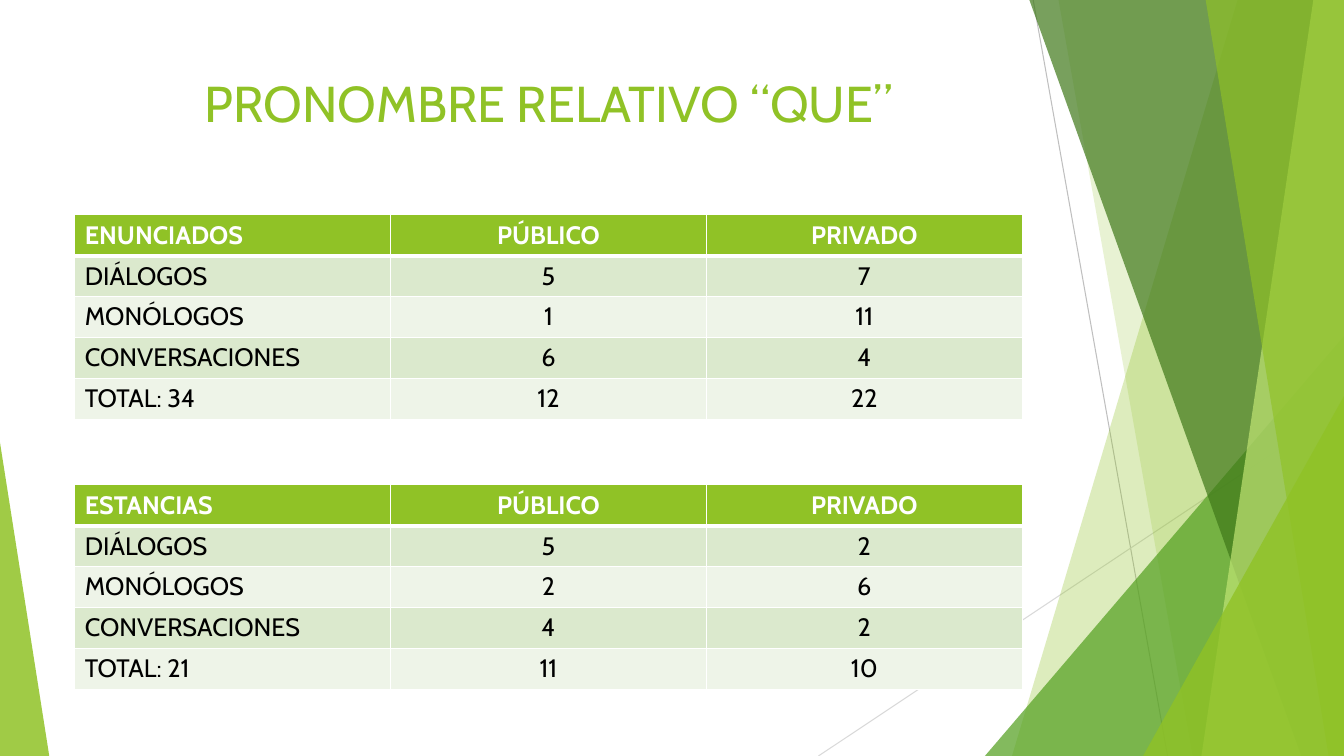
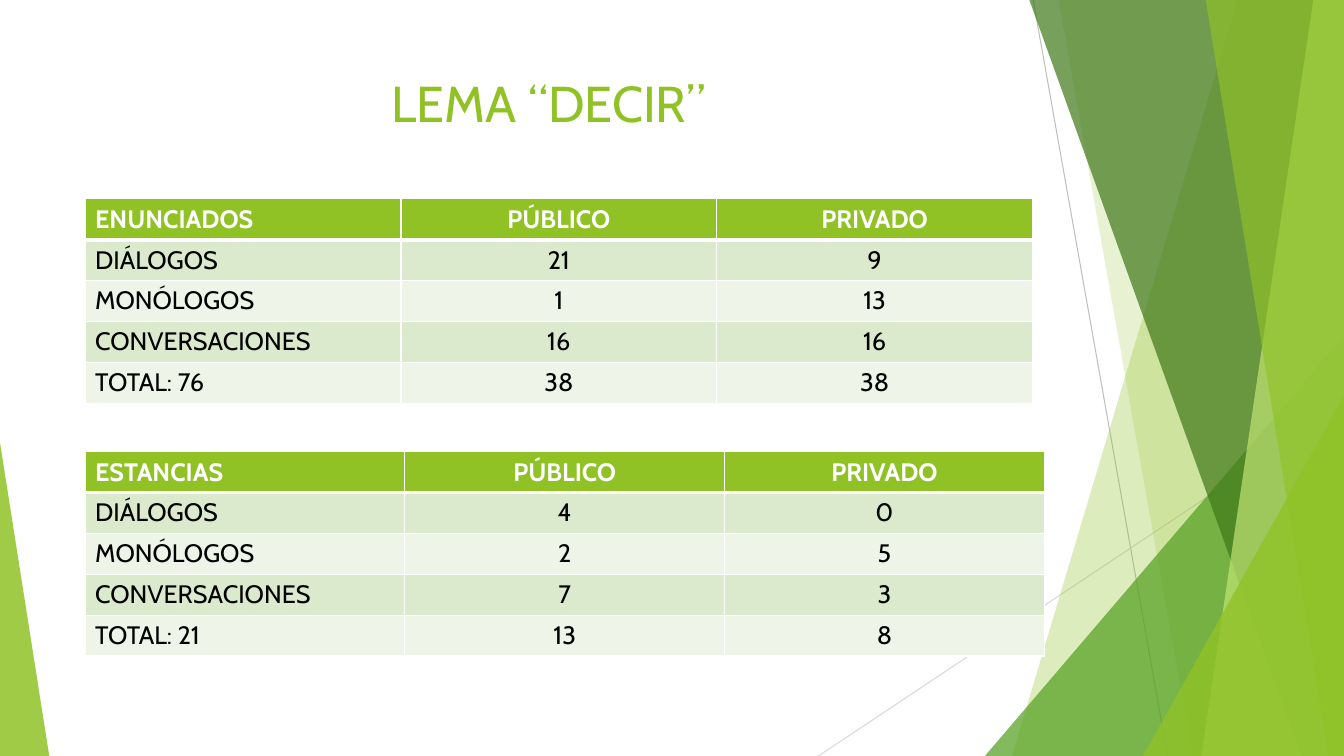
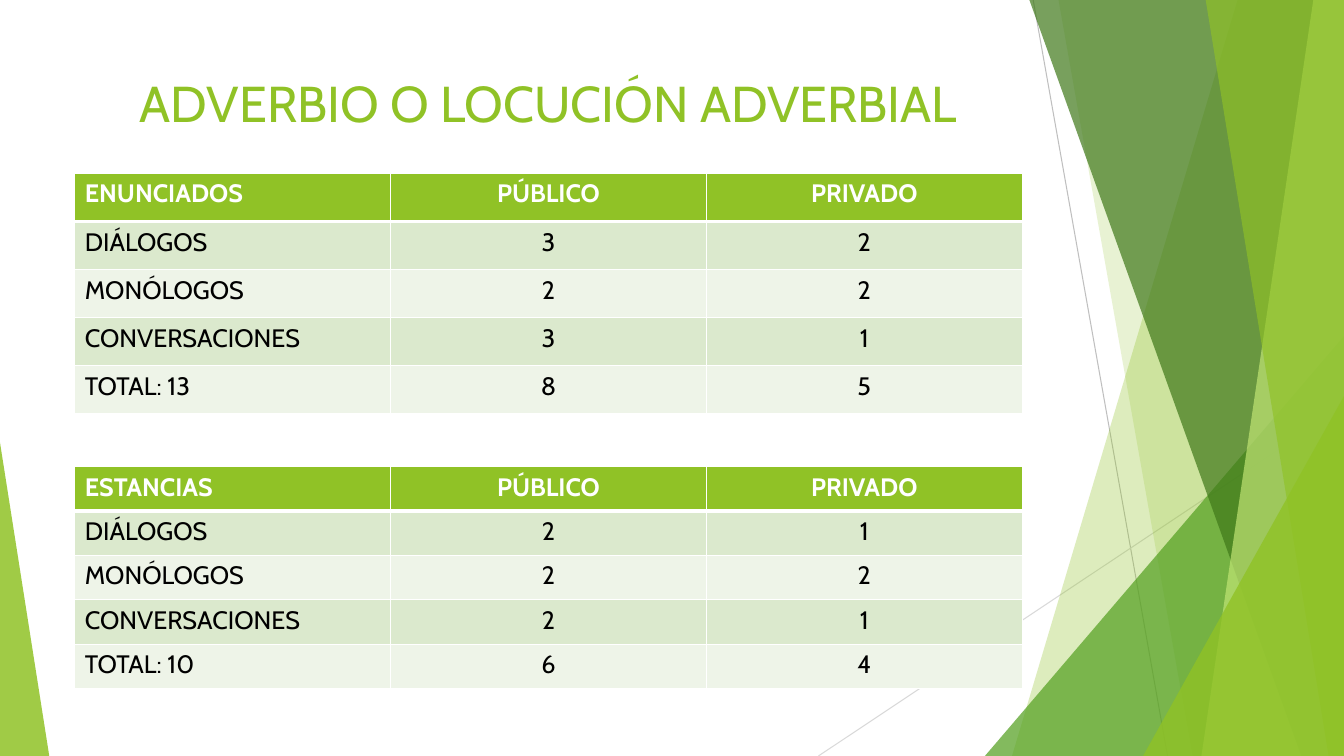
from dataclasses import dataclass
from typing import NamedTuple

from pptx import Presentation
from pptx.dml.color import RGBColor
from pptx.enum.shapes import MSO_CONNECTOR, MSO_SHAPE
from pptx.enum.text import MSO_ANCHOR, PP_ALIGN
from pptx.oxml.ns import qn
from pptx.oxml.xmlchemy import OxmlElement
from pptx.shapes.autoshape import Shape
from pptx.slide import Slide
from pptx.table import _Cell as Cell
from pptx.util import Pt

WIDTH, HEIGHT = 960, 540
FONT = "Cabin"
TITLE_SIZE, CELL_SIZE = 36, 18

GREEN = RGBColor(0x90, 0xC2, 0x26)
MID_GREEN = RGBColor(0x54, 0xA0, 0x21)
DARK_GREEN = RGBColor(0x3F, 0x78, 0x19)
LIME = RGBColor(0xC0, 0xE4, 0x74)
BAND_DARK = RGBColor(0xDB, 0xE9, 0xCD)
BAND_LIGHT = RGBColor(0xEE, 0xF4, 0xE8)
GREY = RGBColor(0xBF, 0xBF, 0xBF)
LIGHT_GREY = RGBColor(0xD9, 0xD9, 0xD9)
WHITE = RGBColor(0xFF, 0xFF, 0xFF)
BLACK = RGBColor(0, 0, 0)

COLUMNS = ("PÚBLICO", "PRIVADO")
CATEGORIES = ("DIÁLOGOS", "MONÓLOGOS", "CONVERSACIONES")


class Ray(NamedTuple):
    start: tuple[float, float]
    end: tuple[float, float]
    color: RGBColor


class Facet(NamedTuple):
    """Full-height panel reaching the right edge, with a slanted left side."""
    top_x: float
    bottom_x: float
    color: RGBColor
    opacity: int


class Corner(NamedTuple):
    """Right triangle standing on the bottom edge; apex 0 is left, 1 right."""
    left: float
    top: float
    width: float
    apex: int
    color: RGBColor
    opacity: int


RAYS = (
    Ray((738, 0), (834, HEIGHT), GREY),
    Ray((WIDTH, 290), (584.6, HEIGHT), LIGHT_GREY),
)
PANELS = (
    Facet(884.2, 722.9, GREEN, 30),
    Facet(756, 851.8, GREEN, 20),
    Corner(703.5, 240, 256.5, 1, MID_GREEN, 72),
    Facet(735.1, 929.5, DARK_GREEN, 70),
    Facet(938.2, 858.2, LIME, 70),
    Facet(861.1, 949, GREEN, 65),
    Corner(816.5, 283, 143.5, 1, GREEN, 80),
    Corner(0, 316, 35.2, 0, GREEN, 85),
)


@dataclass(frozen=True)
class CountTable:
    heading: str
    counts: tuple[tuple[int, int], ...]
    top: float
    left: float = 53.4
    width: float = 676.8
    row_height: float = 29.2

    def rows(self) -> list[tuple[str, ...]]:
        totals = [sum(column) for column in zip(*self.counts)]
        body = [(name, *map(str, pair)) for name, pair in zip(CATEGORIES, self.counts)]
        return [(self.heading, *COLUMNS), *body,
                (f"TOTAL: {sum(totals)}", *map(str, totals))]


@dataclass(frozen=True)
class Page:
    title: str
    tables: tuple[CountTable, CountTable]


PAGES = (
    Page("PRONOMBRE RELATIVO “QUE”", (
        CountTable("ENUNCIADOS", ((5, 7), (1, 11), (6, 4)), 153.4),
        CountTable("ESTANCIAS", ((5, 2), (2, 6), (4, 2)), 346.3),
    )),
    Page("LEMA “DECIR”", (
        CountTable("ENUNCIADOS", ((21, 9), (1, 13), (16, 16)), 142, left=60.8),
        CountTable("ESTANCIAS", ((4, 0), (2, 5), (7, 3)), 322.6, left=60.8, width=685.2),
    )),
    Page("ADVERBIO O LOCUCIÓN ADVERBIAL", (
        CountTable("ENUNCIADOS", ((3, 2), (2, 2), (3, 1)), 124, row_height=34.3),
        CountTable("ESTANCIAS", ((2, 1), (2, 2), (2, 1)), 333.4, row_height=31.7),
    )),
)


def paint(s: Shape, color: RGBColor, opacity: int) -> None:
    s.shadow.inherit = False
    s.line.fill.background()
    s.fill.solid()
    s.fill.fore_color.rgb = color
    alpha = OxmlElement("a:alpha")
    alpha.set("val", str(opacity * 1000))
    next(s.element.spPr.iter(qn("a:srgbClr"))).append(alpha)


def add_ray(slide: Slide, ray: Ray) -> None:
    ends = [Pt(v) for v in (*ray.start, *ray.end)]
    line = slide.shapes.add_connector(MSO_CONNECTOR.STRAIGHT, *ends)
    line.line.color.rgb = ray.color
    line.line.width = Pt(0.75)
    line.element.spPr.append(OxmlElement("a:effectLst"))


def add_facet(slide: Slide, facet: Facet) -> None:
    top = Pt(-0.6)
    outline = slide.shapes.build_freeform(Pt(facet.top_x), top)
    outline.add_line_segments([(Pt(WIDTH), top), (Pt(WIDTH), Pt(HEIGHT)),
                               (Pt(facet.bottom_x), Pt(HEIGHT))])
    paint(outline.convert_to_shape(), facet.color, facet.opacity)


def add_corner(slide: Slide, corner: Corner) -> None:
    s = slide.shapes.add_shape(MSO_SHAPE.ISOSCELES_TRIANGLE, Pt(corner.left), Pt(corner.top),
                               Pt(corner.width), Pt(HEIGHT - corner.top))
    s.adjustments[0] = corner.apex
    paint(s, corner.color, corner.opacity)


def add_background(slide: Slide) -> None:
    for ray in RAYS:
        add_ray(slide, ray)
    for panel in PANELS:
        if isinstance(panel, Facet):
            add_facet(slide, panel)
        else:
            add_corner(slide, panel)


def add_title(slide: Slide, text: str) -> None:
    tf = slide.shapes.add_textbox(Pt(53.4), Pt(48.2), Pt(676.8), Pt(60)).text_frame
    tf.word_wrap = True
    tf.vertical_anchor = MSO_ANCHOR.TOP
    p = tf.paragraphs[0]
    p.text = text
    p.alignment = PP_ALIGN.CENTER
    p.font.name, p.font.size = FONT, Pt(TITLE_SIZE)
    p.font.color.rgb = GREEN


def set_borders(cell: Cell, top: int, bottom: int) -> None:
    """Draw white borders, 1 pt at the sides; call before filling the cell."""
    tc_pr = cell._tc.get_or_add_tcPr()
    for tag, width in (("lnL", 1), ("lnR", 1), ("lnT", top), ("lnB", bottom)):
        ln = OxmlElement(f"a:{tag}")
        ln.set("w", str(Pt(width)))
        fill = OxmlElement("a:solidFill")
        color = OxmlElement("a:srgbClr")
        color.set("val", str(WHITE))
        fill.append(color)
        ln.append(fill)
        tc_pr.append(ln)


def add_count_table(slide: Slide, spec: CountTable) -> None:
    rows = spec.rows()
    n_cols = len(rows[0])
    table = slide.shapes.add_table(len(rows), n_cols, Pt(spec.left), Pt(spec.top), Pt(spec.width),
                                   Pt(spec.row_height * len(rows))).table
    for column in table.columns:
        column.width = Pt(spec.width / n_cols)
    for i, values in enumerate(rows):
        table.rows[i].height = Pt(spec.row_height)
        header = i == 0
        band = GREEN if header else BAND_DARK if i % 2 else BAND_LIGHT
        for j, value in enumerate(values):
            cell = table.cell(i, j)
            set_borders(cell, top=3 if i == 1 else 1, bottom=3 if header else 1)
            cell.fill.solid()
            cell.fill.fore_color.rgb = band
            p = cell.text_frame.paragraphs[0]
            p.text = value
            p.alignment = PP_ALIGN.CENTER if j else PP_ALIGN.LEFT
            p.font.name, p.font.size, p.font.bold = FONT, Pt(CELL_SIZE), header
            p.font.color.rgb = WHITE if header else BLACK


def main() -> None:
    prs = Presentation()
    prs.slide_width, prs.slide_height = Pt(WIDTH), Pt(HEIGHT)
    blank = prs.slide_layouts[6]
    for page in PAGES:
        slide = prs.slides.add_slide(blank)
        add_background(slide)
        add_title(slide, page.title)
        for table in page.tables:
            add_count_table(slide, table)
    prs.save("out.pptx")


if __name__ == "__main__":
    main()
